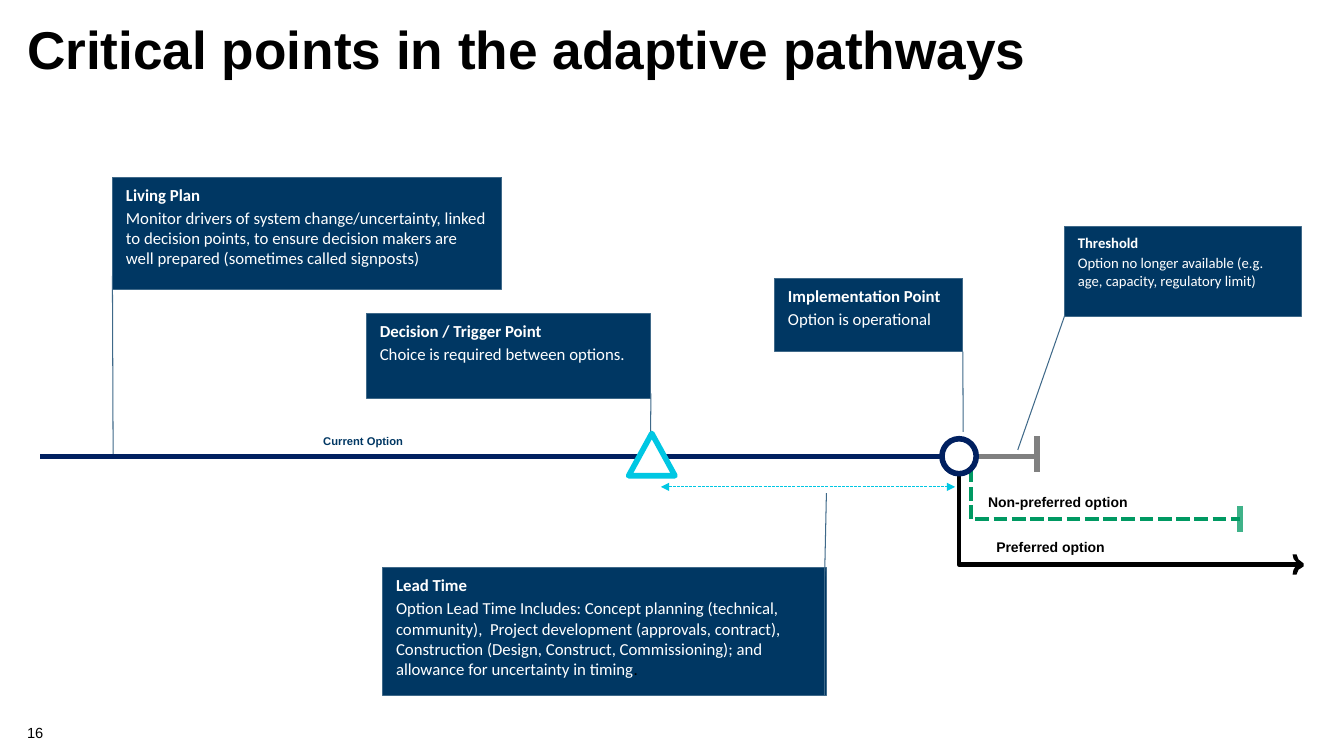
from lxml import etree
from pptx import Presentation
from pptx.dml.color import RGBColor
from pptx.enum.dml import MSO_LINE
from pptx.enum.shapes import MSO_CONNECTOR, MSO_SHAPE
from pptx.enum.text import MSO_ANCHOR
from pptx.oxml.ns import qn
from pptx.util import Pt

COLORS = {
    "black": "000000", "white": "FFFFFF", "navy": "003763", "edge": "3F6989",
    "pathway": "002060", "cyan": "00C7E3", "grey": "808080",
    "green": "009962", "mint": "3FB289",
}

CALLOUTS = [
    ("Decision / Trigger Point", ["Choice is required between options."],
     12, (262, 224, 203, 60.5), (0.942, 1.001, 1.676, 0.999)),
    ("Living Plan",
     ["Monitor drivers of system change/uncertainty, linked to decision points, "
      "to ensure decision makers are well prepared (sometimes called signposts)"],
     12, (80.6, 126.7, 278, 80), (0.88, -0.001, 2.495, 0.001)),
    ("Implementation Point", ["Option is operational"],
     12, (553.7, 198.8, 134, 52), (1.008, 1.003, 2.112, 1.005)),
    ("Threshold", ["Option no longer available (e.g. age, capacity, regulatory limit)"],
     10.5, (761, 162, 169, 64.3), (0.984, 0, 2.479, -0.199)),
    ("Lead Time",
     ["Option Lead Time Includes: Concept planning (technical, community),  Project "
      "development (approvals, contract), Construction (Design, Construct, "
      "Commissioning); and allowance for uncertainty in timing", "."],
     12, (273.6, 405.4, 317, 91.4), (0.069, 0.996, -0.582, 1)),
]

AXIS_Y = 326.2
LINES = [
    ((886.3, 361.4), (886.3, 380.2), "mint", 4),
    ((697.7, AXIS_Y), (740.5, AXIS_Y), "grey", 4),
    ((28.8, AXIS_Y), (673.2, AXIS_Y), "pathway", 4),
    ((740.9, 311.8), (740.9, 337), "grey", 4),
]
LEAD_TIME = ((472.3, 347.8), (682.6, 347.8), "cyan", 0.75)

BRANCHES = [
    ([(694, 334.8), (694, 370.8), (886.3, 370.8)], "green", MSO_LINE.SQUARE_DOT),
    ([(685.4, 338.4), (685.4, 403.2), (927.4, 403.2)], "black", None),
]
ARROWHEAD = [
    (926.6, 396), (928, 399.6), (931.7, 402.5), (931.7, 404.6), (928, 407),
    (926.6, 410.4), (923.8, 410.4), (924.4, 407.2), (925.9, 404.6),
    (917.3, 404.6), (917.3, 401.8), (926.6, 401.8), (924.5, 399.2), (923.8, 396),
]
MARKERS = [
    (MSO_SHAPE.ISOSCELES_TRIANGLE, (449.3, 309.6, 33.1, 30.2), "cyan"),
    (MSO_SHAPE.OVAL, (673.2, 313.4, 24.5, 25), "pathway"),
]

TITLE = ("Critical points in the adaptive pathways", (19.4, 16.6, 921.6, 41.8), 38, "black", True)
PAGE = ("16", (19.4, 514.8, 41, 17.3), 10.5, "black", False)
LABELS = [
    ("Current Option", (223.9, 306.7, 98, 17.3), 8, "navy", True),
    ("Non-preferred option", (699.1, 349.2, 146.9, 19.4), 10, "black", True),
    ("Preferred option", (704.9, 380.9, 101.5, 19.4), 10, "black", True),
]


def rgb(name):
    return RGBColor.from_string(COLORS[name])


def set_font(font, name, size, color, bold):
    font.name, font.size, font.bold = name, Pt(size), bold
    font.color.rgb = rgb(color)


def set_insets(tf, x, y):
    tf.margin_left = tf.margin_right = Pt(x)
    tf.margin_top = tf.margin_bottom = Pt(y)


def set_line(sp, color, width):
    sp.line.color.rgb = rgb(color)
    sp.line.width = Pt(width)


def set_fill(sp, color):
    sp.fill.solid()
    sp.fill.fore_color.rgb = rgb(color)


def add_preset(kind, box, fill, line, width):
    sp = s.shapes.add_shape(kind, *map(Pt, box))
    sp.shadow.inherit = False
    set_fill(sp, fill)
    set_line(sp, line, width)
    return sp


def add_callout(title, body, size, box, adj):
    sp = add_preset(MSO_SHAPE.LINE_CALLOUT_1_BORDER_AND_ACCENT_BAR, box, "navy", "edge", 0.75)
    for i, value in enumerate(adj):
        sp.adjustments[i] = value
    tf = sp.text_frame
    tf.word_wrap = True
    tf.vertical_anchor = MSO_ANCHOR.TOP
    set_insets(tf, 9.4, 5)
    tf.text = title
    p = tf.add_paragraph()
    p.space_before = Pt(size * 0.2)
    for part in body:
        p.add_run().text = part
    for p in tf.paragraphs:
        p.alignment = 1
        for i, r in enumerate(p.runs):
            set_font(r.font, "Calibri", size, "black" if i else "white", p.text == title)


def add_line(start, end, color, width):
    c = s.shapes.add_connector(MSO_CONNECTOR.STRAIGHT, *map(Pt, start + end))
    set_line(c, color, width)
    etree.SubElement(c.line._get_or_add_ln().getparent(), qn("a:effectLst"))
    return c


def add_outline(points, closed):
    pts = [(Pt(x), Pt(y)) for x, y in points]
    fb = s.shapes.build_freeform(*pts[0])
    fb.add_line_segments(pts[1:], close=closed)
    sp = fb.convert_to_shape()
    sp.shadow.inherit = False
    return sp


def add_text(text, box, size, color, bold):
    tf = s.shapes.add_textbox(*map(Pt, box)).text_frame
    tf.word_wrap = True
    tf.text = text
    set_font(tf.paragraphs[0].runs[0].font, "Arial", size, color, bold)
    return tf


prs = Presentation()
prs.slide_width, prs.slide_height = Pt(960.5), Pt(540)
s = prs.slides.add_slide(prs.slide_layouts[6])

tf = add_text(*TITLE)
set_insets(tf, 0, 0)
tf.paragraphs[0].line_spacing = 0.9

for callout in CALLOUTS:
    add_callout(*callout)
for line in LINES:
    add_line(*line)

arrow = add_line(*LEAD_TIME)
arrow.line.dash_style = MSO_LINE.SQUARE_DOT
for end in ("a:headEnd", "a:tailEnd"):
    etree.SubElement(arrow.line._get_or_add_ln(), qn(end), type="triangle")

for points, color, dash in BRANCHES:
    sp = add_outline(points, False)
    sp.fill.background()
    set_line(sp, color, 3.25)
    if dash:
        sp.line.dash_style = dash

for kind, box, color in MARKERS:
    add_preset(kind, box, "white", color, 4)

head = add_outline(ARROWHEAD, True)
set_fill(head, "black")
head.line.fill.background()

for label in LABELS:
    add_text(*label)

tf = add_text(*PAGE)
set_insets(tf, 0, 0)
tf.vertical_anchor = MSO_ANCHOR.MIDDLE

prs.save("out.pptx")
